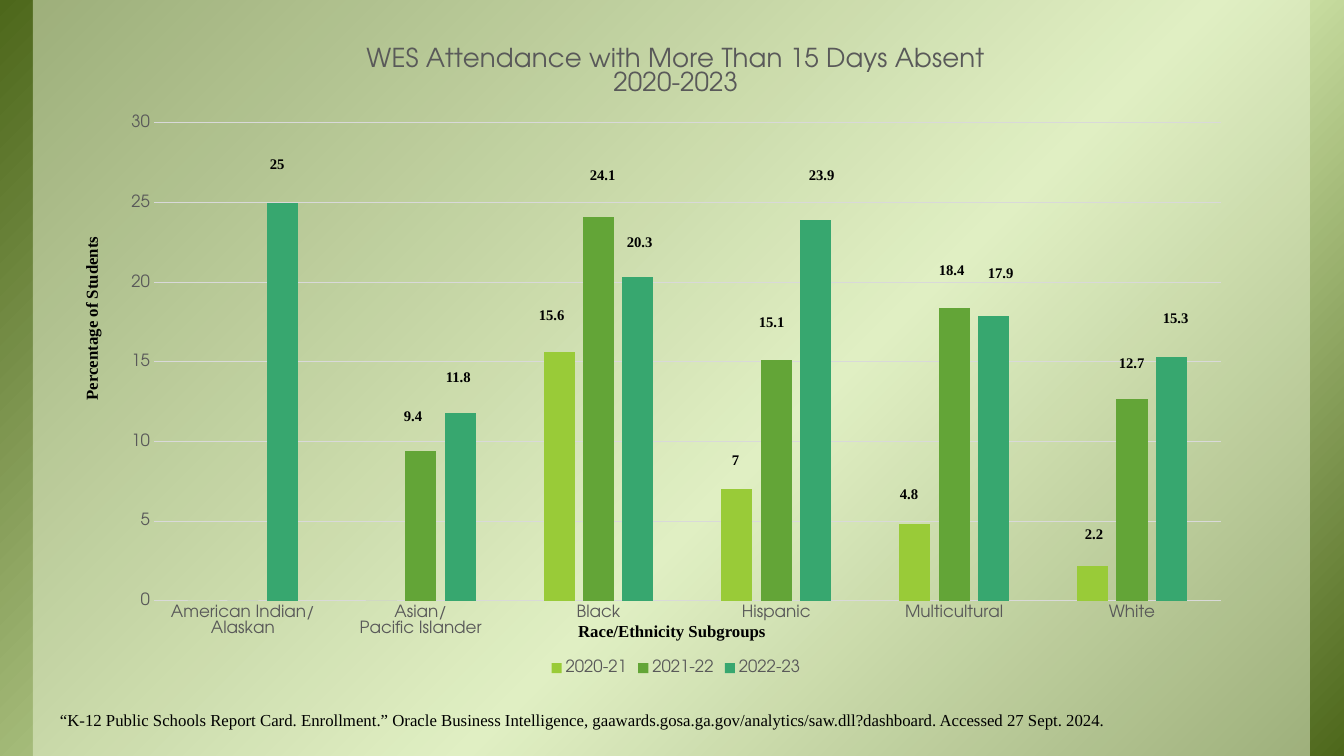
"""Build the WES attendance slide: a clustered column chart with value labels and a source line."""
import copy

import lxml.etree
import pptx
import pptx.chart.data
import pptx.dml.color
import pptx.enum.chart
import pptx.enum.shapes
import pptx.enum.text
import pptx.oxml.ns
import pptx.util

EMU_PER_PX = 12192000 / 1344
SERIF = "Times New Roman"
SANS = "TeX Gyre Adventor"
CENTER = pptx.enum.text.PP_ALIGN.CENTER
LEFT = pptx.enum.text.PP_ALIGN.LEFT
qn = pptx.oxml.ns.qn


def px(*lengths):
    return [pptx.util.Emu(round(length * EMU_PER_PX)) for length in lengths]


def color(hex_code):
    return pptx.dml.color.RGBColor.from_string(hex_code)


presentation = pptx.Presentation()
presentation.slide_width, presentation.slide_height = px(1344, 756)
slide = presentation.slides.add_slide(presentation.slide_layouts[6])
shapes = slide.shapes

RECTANGLE = pptx.enum.shapes.MSO_SHAPE.RECTANGLE
backdrop = shapes.add_shape(RECTANGLE, *px(0, 0, 1344, 756))
panel = shapes.add_shape(RECTANGLE, *px(33, 0, 1277, 756))
for shape in (backdrop, panel):
    shape.shadow.inherit = False
    shape.line.fill.background()

backdrop.fill.gradient()
backdrop.fill.gradient_angle = 315
stop_list = backdrop._element.spPr.find(".//" + qn("a:gsLst"))
stop_list.append(copy.deepcopy(stop_list[-1]))
gradient = [(0, "4D671B"), (0.58, "D6EAAF"), (1, "4D671B")]
for stop, (position, hex_code) in zip(backdrop.fill.gradient_stops, gradient):
    stop.position = position
    stop.color.rgb = color(hex_code)

panel.fill.solid()
panel.fill.fore_color.rgb = color("EBF5D7")
panel_color = panel._element.spPr.find(".//" + qn("a:srgbClr"))
lxml.etree.SubElement(panel_color, qn("a:alpha")).set("val", "50000")

subgroups = ["American Indian/\nAlaskan", "Asian/\nPacific Islander", "Black",
             "Hispanic", "Multicultural", "White"]
years = [
    ("2020-21", "99CB38", [0, 0, 15.6, 7, 4.8, 2.2],
     [(529, 302), (722, 447), (890, 481), (1075, 521)]),
    ("2021-22", "63A537", [0, 9.4, 24.1, 15.1, 18.4, 12.7],
     [(394, 403), (580, 162), (749, 309), (929, 257), (1109, 350)]),
    ("2022-23", "37A76F", [25, 11.8, 20.3, 23.9, 17.9, 15.3],
     [(260, 151), (436, 364), (617, 229), (799, 162), (978, 260), (1153, 305)]),
]
chart_data = pptx.chart.data.CategoryChartData()
chart_data.categories = subgroups
for name, hex_code, values, spots in years:
    chart_data.add_series(name, values)

chart_left, chart_top, chart_width, chart_height = 109, 25, 1134, 655
chart = shapes.add_chart(
    pptx.enum.chart.XL_CHART_TYPE.COLUMN_CLUSTERED,
    *px(chart_left, chart_top, chart_width, chart_height), chart_data).chart
chart.font.size = pptx.util.Pt(10)
chart.font.name = SANS
chart.font.color.rgb = color("000000")

chart.has_title = True
title_frame = chart.chart_title.text_frame
title_lines = ["WES Attendance with More Than 15 Days Absent", "2020-2023"]
for index, line in enumerate(title_lines):
    paragraph = title_frame.add_paragraph() if index else title_frame.paragraphs[0]
    run = paragraph.add_run()
    run.text = line
    run.font.size = pptx.util.Pt(18.6)
    run.font.bold = False
    run.font.name = SANS
    run.font.color.rgb = color("595959")
chart.chart_title.include_in_layout = False

chart.has_legend = True
chart.legend.position = pptx.enum.chart.XL_LEGEND_POSITION.BOTTOM
chart.legend.include_in_layout = False
category_axis, value_axis = chart.category_axis, chart.value_axis
for part in (category_axis.tick_labels, value_axis.tick_labels, chart.legend):
    part.font.size = pptx.util.Pt(12)
    part.font.name = SANS
    part.font.color.rgb = color("595959")

for axis in (category_axis, value_axis):
    axis.major_tick_mark = pptx.enum.chart.XL_TICK_MARK.NONE
    axis.minor_tick_mark = pptx.enum.chart.XL_TICK_MARK.NONE
value_axis.minimum_scale, value_axis.maximum_scale = 0, 30
value_axis.major_unit = 5
value_axis.has_major_gridlines = True
value_axis.format.line.fill.background()
for line in (category_axis.format.line, value_axis.major_gridlines.format.line):
    line.color.rgb = color("D9D9D9")
    line.width = pptx.util.Pt(0.75)

plot = chart.plots[0]
plot.gap_width = 219
plot.overlap = -27
plot.vary_by_categories = False
for series, (name, hex_code, values, spots) in zip(plot.series, years):
    series.format.fill.solid()
    series.format.fill.fore_color.rgb = color(hex_code)

plot_area = chart._chartSpace.find(".//" + qn("c:plotArea"))
for old_layout in plot_area.findall(qn("c:layout")):
    plot_area.remove(old_layout)
layout = lxml.etree.Element(qn("c:layout"))
plot_area.insert(0, layout)
manual = lxml.etree.SubElement(layout, qn("c:manualLayout"))
for tag, setting in [
    ("layoutTarget", "inner"), ("xMode", "edge"), ("yMode", "edge"),
    ("x", (154 - chart_left) / chart_width), ("y", (123 - chart_top) / chart_height),
    ("w", 1067 / chart_width), ("h", 478 / chart_height),
]:
    lxml.etree.SubElement(manual, qn("c:" + tag)).set("val", str(setting))

citation = ("“K-12 Public Schools Report Card. Enrollment.” Oracle Business Intelligence, "
            "gaawards.gosa.ga.gov/analytics/saw.dll?dashboard. Accessed 27 Sept. 2024.")
labels = [
    ("Percentage of Students", (-93, 304, 370, 29), 12, True, CENTER, 270),
    ("Race/Ethnicity Subgroups", (487, 617, 370, 29), 12, True, CENTER, 0),
    (citation, (50, 706, 1218, 50), 12, False, LEFT, 0),
]
for name, hex_code, values, spots in years:
    for value, (left, top) in zip(filter(None, values), spots):
        labels.append((f"{value:g}", (left, top, 50, 28), 10.5, True, LEFT, 0))

for text, place, size, bold, alignment, rotation in labels:
    label = shapes.add_textbox(*px(*place))
    label.rotation = rotation
    label.text_frame.word_wrap = True
    label.text_frame.auto_size = pptx.enum.text.MSO_AUTO_SIZE.SHAPE_TO_FIT_TEXT
    paragraph = label.text_frame.paragraphs[0]
    paragraph.alignment = alignment
    paragraph.line_spacing = 0.95
    run = paragraph.add_run()
    run.text = text
    run.font.size = pptx.util.Pt(size)
    run.font.bold = bold
    run.font.name = SERIF
    run.font.color.rgb = color("000000")

presentation.save("out.pptx")
